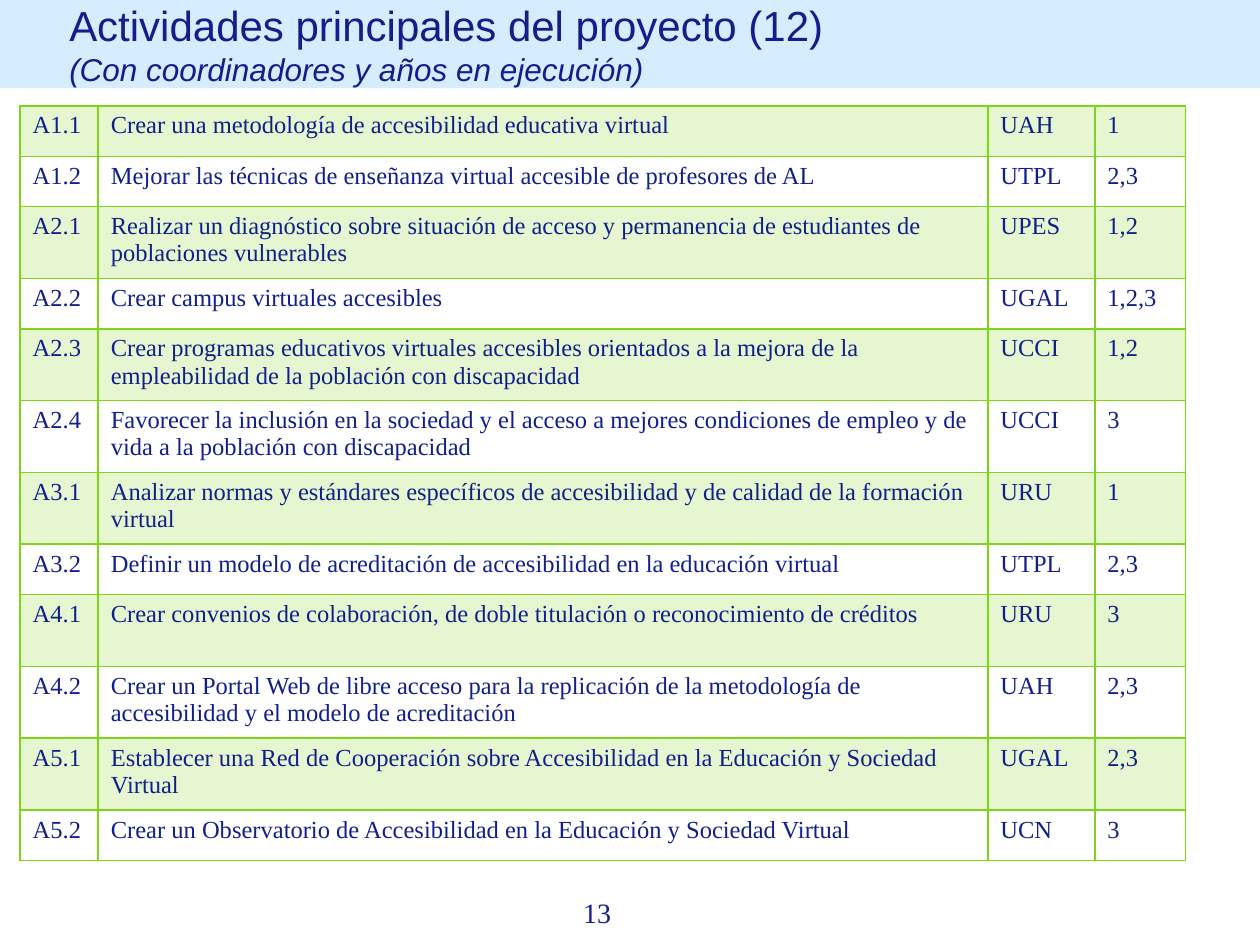
from typing import NamedTuple

from lxml import etree
from pptx import Presentation
from pptx import util as u
from pptx.dml.color import RGBColor
from pptx.enum import shapes, text
from pptx.oxml.ns import qn

NAVY = RGBColor(0x11, 0x1F, 0x8A)
SKY = RGBColor(0xD6, 0xEC, 0xFF)
GREEN = RGBColor(0x7E, 0xD4, 0x16)
SERIF = "Times New Roman"
SANS = "Arial"
GRID_COLS, GRID_ROWS = 1000, 750
COL_SPANS = (62, 706, 85, 72)
SHORT_ROW, TALL_ROW = 40, 57


class Activity(NamedTuple):
    code: str
    task: str
    coordinator: str
    years: str
    span: int = SHORT_ROW


ACTIVITIES = (
    Activity("A1.1", "Crear una metodología de accesibilidad educativa virtual", "UAH", "1"),
    Activity("A1.2", "Mejorar las técnicas de enseñanza virtual accesible de profesores de AL",
             "UTPL", "2,3"),
    Activity("A2.1", "Realizar un diagnóstico sobre situación de acceso y permanencia de "
             "estudiantes de poblaciones vulnerables", "UPES", "1,2", TALL_ROW),
    Activity("A2.2", "Crear campus virtuales accesibles", "UGAL", "1,2,3"),
    Activity("A2.3", "Crear programas educativos virtuales accesibles orientados a la mejora de la "
             "empleabilidad de la población con discapacidad", "UCCI", "1,2", TALL_ROW),
    Activity("A2.4", "Favorecer la inclusión en la sociedad y el acceso a mejores condiciones de "
             "empleo y de vida a la población con discapacidad", "UCCI", "3", TALL_ROW),
    Activity("A3.1", "Analizar normas y estándares específicos de accesibilidad y de calidad de la "
             "formación virtual", "URU", "1", TALL_ROW),
    Activity("A3.2", "Definir un modelo de acreditación de accesibilidad en la educación virtual",
             "UTPL", "2,3"),
    Activity("A4.1", "Crear convenios de colaboración, de doble titulación o reconocimiento de "
             "créditos", "URU", "3", TALL_ROW),
    Activity("A4.2", "Crear un Portal Web de libre acceso para la replicación de la metodología de "
             "accesibilidad y el modelo de acreditación", "UAH", "2,3", TALL_ROW),
    Activity("A5.1", "Establecer una Red de Cooperación sobre Accesibilidad en la Educación y "
             "Sociedad Virtual", "UGAL", "2,3", TALL_ROW),
    Activity("A5.2", "Crear un Observatorio de Accesibilidad en la Educación y Sociedad Virtual",
             "UCN", "3"),
)

prs = Presentation()
prs.slide_width, prs.slide_height = u.Inches(10), u.Inches(7.5)


def col(n: float) -> int:
    return round(prs.slide_width * n / GRID_COLS)


def row(n: float) -> int:
    return round(prs.slide_height * n / GRID_ROWS)


def write(p, content: str, *, size: float, font: str = SERIF, italic: bool = False,
          align=text.PP_ALIGN.LEFT) -> None:
    p.alignment = align
    r = p.add_run()
    r.text = content
    r.font.size = u.Pt(size)
    r.font.name = font
    r.font.italic = italic
    r.font.color.rgb = NAVY


def add_header(s) -> None:
    sp = s.shapes.add_shape(shapes.MSO_SHAPE.RECTANGLE, 0, 0, prs.slide_width, row(70))
    sp.shadow.inherit = False
    sp.fill.solid()
    sp.fill.fore_color.rgb = SKY
    sp.line.fill.background()
    tf = sp.text_frame
    tf.word_wrap = True
    tf.vertical_anchor = text.MSO_ANCHOR.MIDDLE
    tf.margin_left, tf.margin_right = col(55), col(39)
    tf.margin_top = tf.margin_bottom = row(5)
    write(tf.paragraphs[0], "Actividades principales del proyecto (12)", size=24, font=SANS)
    write(tf.add_paragraph(), "(Con coordinadores y años en ejecución)", size=18, font=SANS,
          italic=True)


def style_cell(cell, shaded: bool) -> None:
    tc_pr = cell._tc.get_or_add_tcPr()
    if shaded:
        cell.fill.solid()
        cell.fill.fore_color.rgb = GREEN
        color = tc_pr.find(f"{qn('a:solidFill')}/{qn('a:srgbClr')}")
        etree.SubElement(color, qn("a:alpha"), val="20000")
    else:
        cell.fill.background()
    for i, side in enumerate(("lnL", "lnR", "lnT", "lnB")):
        ln = etree.Element(qn(f"a:{side}"), w=str(u.Pt(1)))
        fill = etree.SubElement(ln, qn("a:solidFill"))
        etree.SubElement(fill, qn("a:srgbClr"), val=str(GREEN))
        tc_pr.insert(i, ln)


def add_activities(s) -> None:
    height = sum(a.span for a in ACTIVITIES)
    table = s.shapes.add_table(len(ACTIVITIES), len(COL_SPANS), col(16), row(84),
                               col(sum(COL_SPANS)), row(height)).table
    table.first_row = table.horz_banding = False
    for column, span in zip(table.columns, COL_SPANS):
        column.width = col(span)
    for i, activity in enumerate(ACTIVITIES):
        table.rows[i].height = row(activity.span)
        for cell, content in zip(table.rows[i].cells, activity[:len(COL_SPANS)]):
            write(cell.text_frame.paragraphs[0], content, size=14)
            style_cell(cell, shaded=i % 2 == 0)


def add_page_number(s) -> None:
    tf = s.shapes.add_textbox(col(453), row(706), col(67), row(37)).text_frame
    tf.word_wrap = True
    write(tf.paragraphs[0], "13", size=16)


def main() -> None:
    s = prs.slides.add_slide(prs.slide_layouts[6])
    add_page_number(s)
    add_header(s)
    add_activities(s)
    prs.save("out.pptx")


if __name__ == "__main__":
    main()
